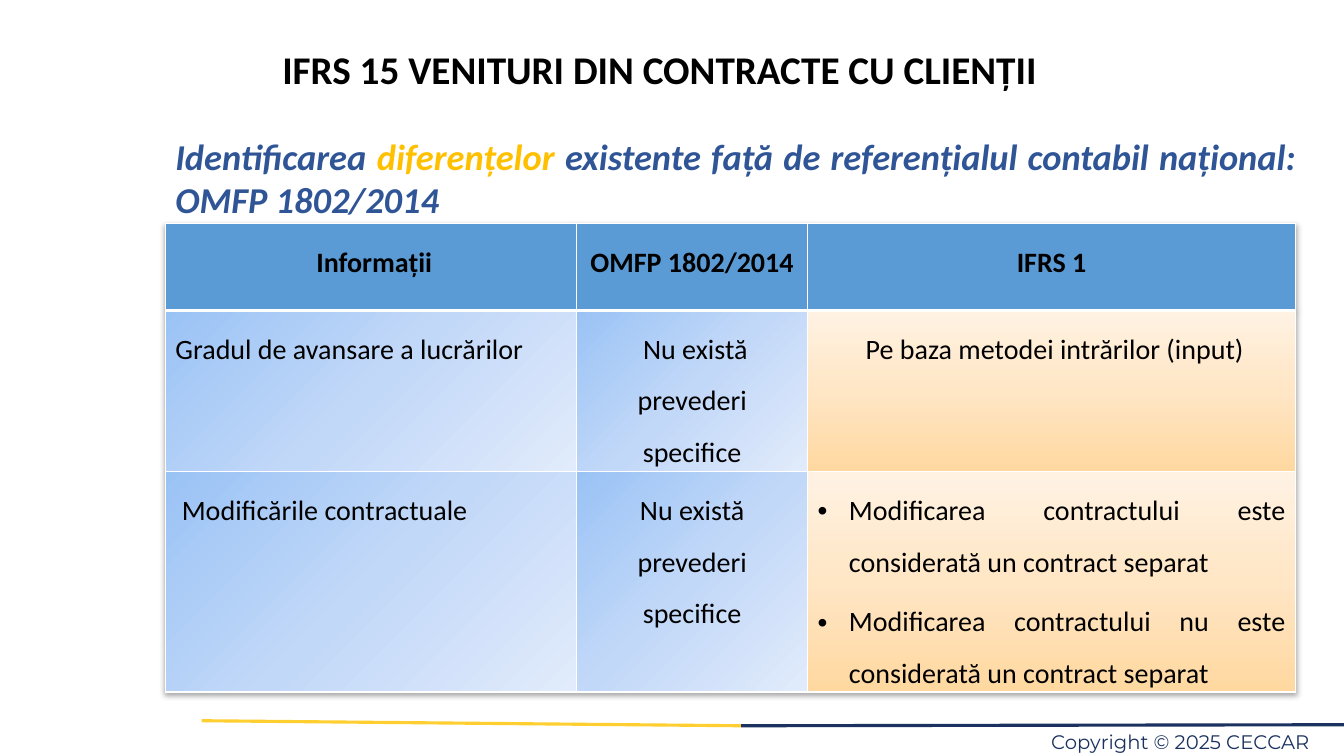
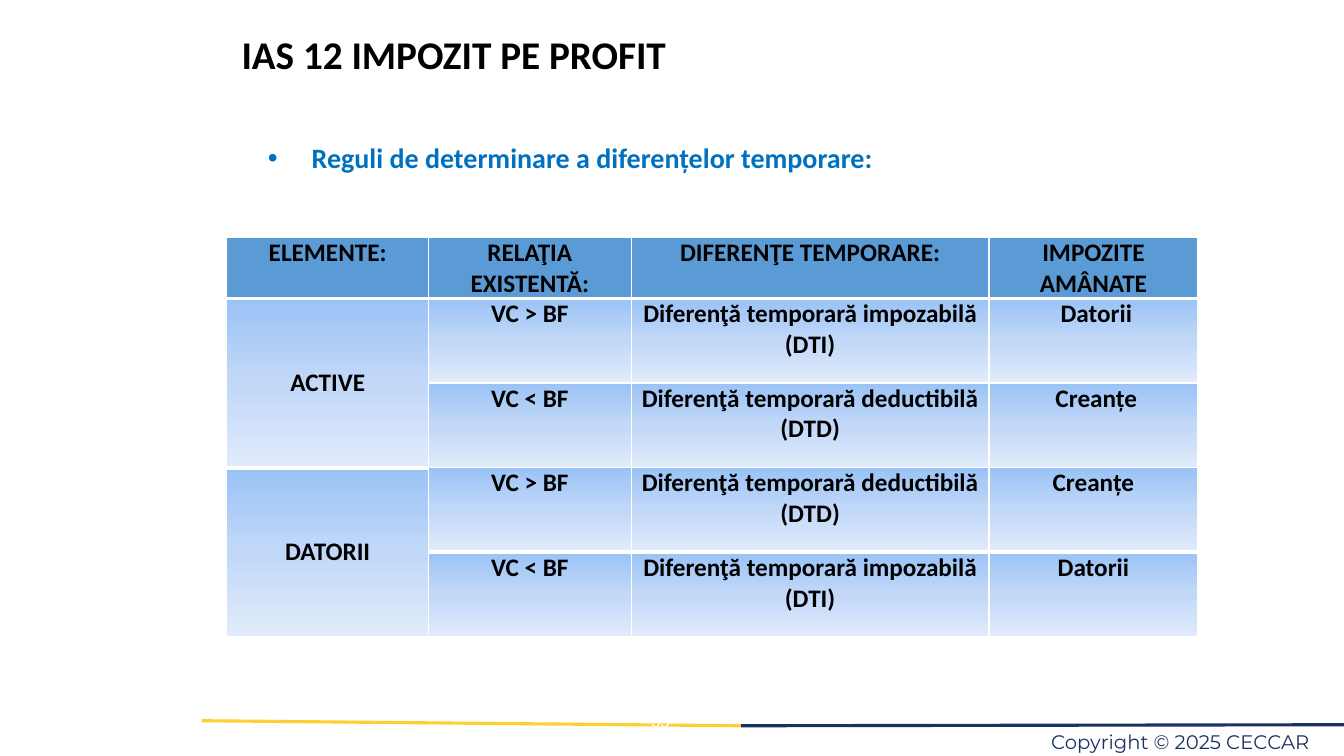
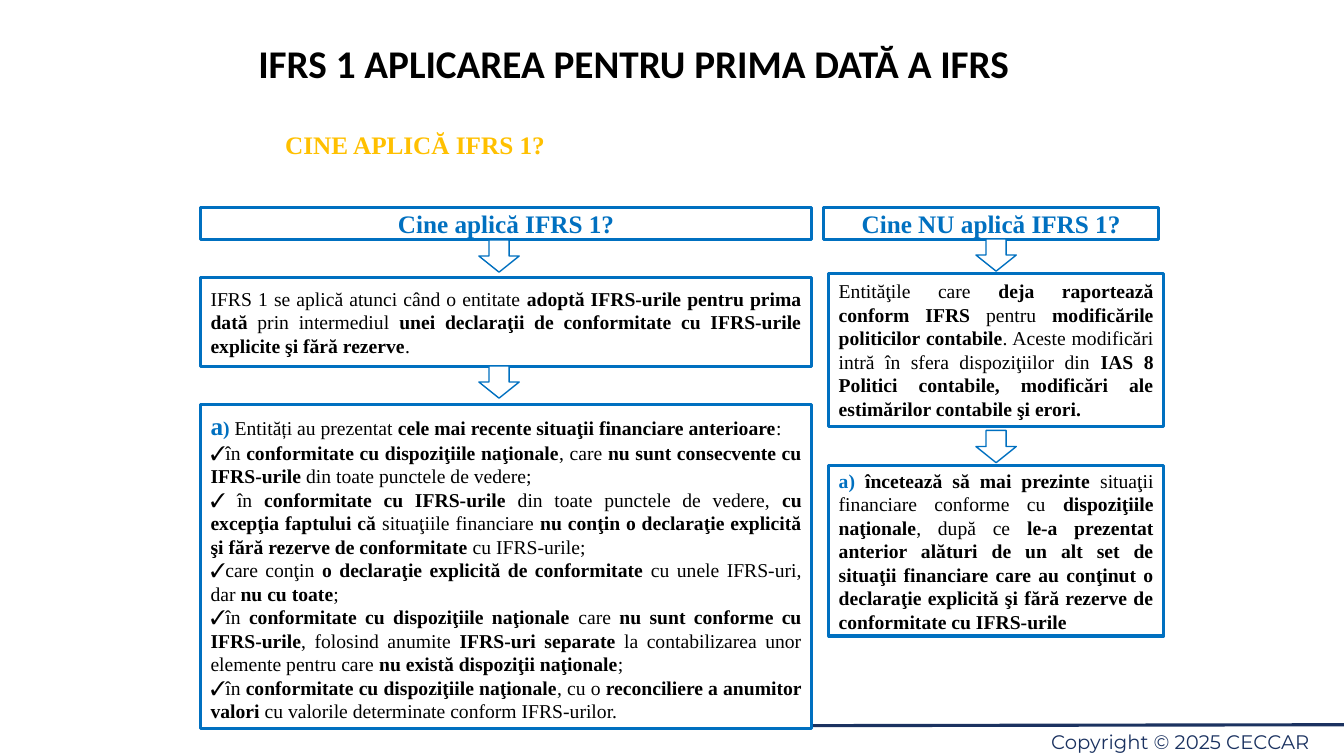
from dataclasses import dataclass, replace

from lxml.etree import SubElement
from pptx import Presentation
from pptx.dml.color import RGBColor
from pptx.enum.shapes import MSO_CONNECTOR, MSO_SHAPE
from pptx.enum.text import MSO_ANCHOR, PP_ALIGN
from pptx.oxml.ns import qn
from pptx.util import Pt

EMU_PER_PX = 9144


@dataclass(frozen=True)
class Type:
    """Describes one kind of lettering."""

    font: str
    size: int
    color: str
    bold: bool = False
    italic: bool = False


@dataclass(frozen=True)
class Theme:
    """Holds the colours and type styles of the presentation."""

    white: str = "FFFFFF"
    yellow: str = "FFCE31"
    navy: str = "1B3260"
    gold: str = "FFC000"
    blue: str = "0070C0"
    header: str = "5B9BD5"
    blue_fade: tuple = ("9AC3F5", "C2D8F8", "E1EBFB")
    orange_fade: tuple = ("FFD8A0", "FFE6C5", "FFF2E3")
    title: Type = Type("Calibri", 28, "000000", True)
    subtitle: Type = Type("Calibri", 26, "2F5597", True, True)
    rule: Type = Type("Calibri", 20, "0070C0", True)
    cell: Type = Type("Calibri", 20, "000000")
    cell_header: Type = Type("Calibri", 20, "000000", True)
    matrix: Type = Type("Calibri", 18, "000000", True)
    question: Type = Type("Times New Roman", 18, "FFC000", True)
    heading: Type = Type("Times New Roman", 18, "0070C0", True)
    step: Type = Type("Times New Roman", 14, "000000")
    copyright: Type = Type("Montserrat", 14, "1B3260")
    number: Type = Type("Arial", 12, "FFFFFF")


@dataclass(frozen=True)
class Step:
    """Describes a box of a flow and the arrow leading to it."""

    top: int
    height: int
    arrow_top: int
    paragraphs: tuple
    lead: tuple = ()


THEME = Theme()


def px(length):
    """Turn px into EMU."""
    return length * EMU_PER_PX


def place(box):
    """Turn a box in px into EMU lengths."""
    return [px(length) for length in box]


def apply_type(font, style):
    """Give a font the look of a type style."""
    font.name, font.size = style.font, Pt(style.size)
    font.bold, font.italic = style.bold, style.italic
    font.color.rgb = RGBColor.from_string(style.color)


def set_indent(paragraph, left, first=0, bullet=None):
    """Indent a paragraph and give it an optional bullet."""
    properties = paragraph._p.get_or_add_pPr()
    properties.set("marL", str(px(left)))
    properties.set("indent", str(px(first)))
    if bullet:
        SubElement(properties, qn("a:buFont"), typeface="Arial")
        SubElement(properties, qn("a:buChar"), char=bullet)


def write(paragraph, text, style, align=PP_ALIGN.LEFT, spacing=None, emphasis=None, lead=()):
    """Write a paragraph whose parts between asterisks are emphasised."""
    paragraph.alignment = align
    if spacing:
        paragraph.line_spacing = spacing
    apply_type(paragraph.font, style)
    for lead_text, lead_style in lead:
        run = paragraph.add_run()
        run.text = lead_text
        apply_type(run.font, lead_style)
    for index, part in enumerate(text.split("*")):
        if part:
            run = paragraph.add_run()
            run.text = part
            if index % 2:
                apply_type(run.font, emphasis)


def add_text(slide, box, text, style, anchor=MSO_ANCHOR.TOP, **options):
    """Add a wrapping text box with one paragraph and return its frame."""
    frame = slide.shapes.add_textbox(*place(box)).text_frame
    frame.word_wrap = True
    frame.vertical_anchor = anchor
    write(frame.paragraphs[0], text, style, **options)
    return frame


def add_title(slide, box, text):
    """Add the slide title."""
    add_text(slide, box, text, THEME.title, align=PP_ALIGN.CENTER, spacing=0.9)


def add_footer(slide):
    """Draw the two-coloured rule and the copyright line."""
    for start, end, color in (
        ((200, 715), (735, 720), THEME.yellow),
        ((735, 720), (1333, 719), THEME.navy),
    ):
        line = slide.shapes.add_connector(MSO_CONNECTOR.STRAIGHT, *place(start + end))
        line.line.color.rgb = RGBColor.from_string(color)
        line.line.width = Pt(2.25)
        SubElement(line._element.spPr, qn("a:effectLst"))
    frame = add_text(slide, (911, 719, 393, 27), "Copyright © 2025 CECCAR ",
                     THEME.copyright, align=PP_ALIGN.RIGHT, spacing=Pt(20.5))
    frame.margin_left = frame.margin_right = frame.margin_top = frame.margin_bottom = 0


def new_slide(presentation):
    """Add a blank slide with the shared footer."""
    slide = presentation.slides.add_slide(presentation.slide_layouts[6])
    add_footer(slide)
    return slide


def add_grid(slide, left, top, columns, rows):
    """Add a plain table with the given column widths and row heights."""
    box = (left, top, sum(columns), sum(rows))
    table = slide.shapes.add_table(len(rows), len(columns), *place(box)).table
    table.first_row = table.horz_banding = False
    for column, width in zip(table.columns, columns):
        column.width = px(width)
    for row, height in zip(table.rows, rows):
        row.height = px(height)
    return table


def add_shadow(table):
    """Put a soft shadow below a table."""
    properties = table._tbl.tblPr
    effects = SubElement(properties, qn("a:effectLst"))
    properties.insert(0, effects)
    shadow = SubElement(effects, qn("a:outerShdw"), blurRad="40000", dist="23000",
                        dir="5400000", rotWithShape="0")
    color = SubElement(shadow, qn("a:srgbClr"), val="000000")
    SubElement(color, qn("a:alpha"), val="35000")


def set_borders(cell, top=1, bottom=1):
    """Give a cell white borders with the given widths in points."""
    properties = cell._tc.get_or_add_tcPr()
    for side, width in (("L", 1), ("R", 1), ("T", top), ("B", bottom)):
        line = SubElement(properties, qn(f"a:ln{side}"), w=str(Pt(width)))
        fill = SubElement(line, qn("a:solidFill"))
        SubElement(fill, qn("a:srgbClr"), val=THEME.white)


def fill_header(cell):
    """Colour a header cell."""
    set_borders(cell, bottom=3)
    cell.fill.solid()
    cell.fill.fore_color.rgb = RGBColor.from_string(THEME.header)


def fill_fade(cell, colors, angle, top=1):
    """Colour a body cell with an even gradient."""
    set_borders(cell, top=top)
    gradient = SubElement(cell._tc.get_or_add_tcPr(), qn("a:gradFill"), rotWithShape="1")
    stops = SubElement(gradient, qn("a:gsLst"))
    for index, color in enumerate(colors):
        stop = SubElement(stops, qn("a:gs"), pos=str(index * 50000))
        SubElement(stop, qn("a:srgbClr"), val=color)
    SubElement(gradient, qn("a:lin"), ang=str(angle * 60000), scaled="0")


def add_comparison_table(slide, left, top):
    """Add the table comparing the national rules with IFRS."""
    rows = (
        (" Informații", "OMFP 1802/2014", "IFRS 1"),
        ("Gradul de avansare a lucrărilor", " Nu există prevederi specifice",
         " Pe baza metodei intrărilor (input)"),
        (" Modificările contractuale", "Nu există prevederi specifice",
         ("Modificarea contractului este considerată un contract separat",
          "Modificarea contractului nu este considerată un contract separat")),
    )
    table = add_grid(slide, left, top, (408, 229, 484), (86, 137, 190))
    add_shadow(table)
    for row, texts in enumerate(rows):
        for column, text in enumerate(texts):
            cell = table.cell(row, column)
            if row == 0:
                fill_header(cell)
            elif column == 2:
                fill_fade(cell, THEME.orange_fade, 270)
            else:
                fill_fade(cell, THEME.blue_fade, 45)
            style = THEME.cell if row else THEME.cell_header
            align = PP_ALIGN.LEFT if row and column == 0 else PP_ALIGN.CENTER
            frame = cell.text_frame
            if isinstance(text, str):
                write(frame.paragraphs[0], text, style, align, 1.5)
                continue
            for index, item in enumerate(text):
                paragraph = frame.add_paragraph() if index else frame.paragraphs[0]
                set_indent(paragraph, 31, -31, "•")
                write(paragraph, item, style, PP_ALIGN.JUSTIFY, 1.5)
                if index:
                    paragraph.space_before = Pt(6)


def add_matrix_table(slide, left, top):
    """Add the table of temporary differences."""
    taxable = "Diferenţă temporară impozabilă (DTI)"
    deductible = "Diferenţă temporară deductibilă (DTD)"
    rows = (
        ("ELEMENTE:", "RELAŢIA EXISTENTĂ:", "DIFERENŢE TEMPORARE:", "IMPOZITE AMÂNATE"),
        ("ACTIVE", "VC > BF", taxable, " Datorii"),
        ("", "VC < BF", deductible, " Creanțe"),
        ("DATORII", "VC > BF", deductible, "Creanțe"),
        ("", "VC < BF", taxable, "Datorii"),
    )
    table = add_grid(slide, left, top, (200, 201, 355, 207), (60, 84, 84, 84, 84))
    for row, texts in enumerate(rows):
        for column, text in enumerate(texts):
            cell = table.cell(row, column)
            cell.margin_left = cell.margin_right = px(7)
            cell.margin_top = cell.margin_bottom = 0
            if row == 0:
                fill_header(cell)
            else:
                thick = (row, column) == (3, 0) or (row == 4 and column > 0)
                fill_fade(cell, THEME.blue_fade, 90, top=3 if thick else 1)
            if text:
                write(cell.text_frame.paragraphs[0], text, THEME.matrix, PP_ALIGN.CENTER)
    for row in (1, 3):
        table.cell(row, 0).merge(table.cell(row + 1, 0))
        table.cell(row, 0).vertical_anchor = MSO_ANCHOR.MIDDLE


def add_outlined(slide, kind, box, width):
    """Add a white shape with a blue outline."""
    shape = slide.shapes.add_shape(kind, *place(box))
    shape.shadow.inherit = False
    shape.fill.solid()
    shape.fill.fore_color.rgb = RGBColor.from_string(THEME.white)
    shape.line.color.rgb = RGBColor.from_string(THEME.blue)
    shape.line.width = Pt(width)
    return shape


def add_box(slide, box, paragraphs, style, align, lead=()):
    """Add an outlined box of text, with a lead before its first paragraph."""
    frame = add_outlined(slide, MSO_SHAPE.RECTANGLE, box, 2.25).text_frame
    frame.word_wrap = True
    frame.vertical_anchor = MSO_ANCHOR.MIDDLE
    for index, text in enumerate(paragraphs):
        paragraph = frame.add_paragraph() if index else frame.paragraphs[0]
        write(paragraph, text, style, align, emphasis=replace(style, bold=True),
              lead=() if index else lead)


def add_flow(slide, left, top, width, heading, steps, arrow_left, step_left=0):
    """Add a heading followed by boxes that arrows lead to."""
    add_box(slide, (left, top, width, 32), (heading,), THEME.heading, PP_ALIGN.CENTER)
    for step in steps:
        add_box(slide, (left + step_left, top + step.top, width, step.height),
                step.paragraphs, THEME.step, PP_ALIGN.JUSTIFY, step.lead)
    for step in steps:
        add_outlined(slide, MSO_SHAPE.DOWN_ARROW,
                     (left + arrow_left, top + step.arrow_top, 40, 32), 1)


def build_revenue_slide(presentation):
    """Build the slide on revenue from contracts."""
    slide = new_slide(presentation)
    add_text(slide, (164, 128, 1132, 94),
             "Identificarea *diferențelor *existente față de referențialul contabil "
             "național: OMFP 1802/2014", THEME.subtitle, align=PP_ALIGN.JUSTIFY,
             emphasis=replace(THEME.subtitle, color=THEME.gold))
    add_comparison_table(slide, 164, 222)
    add_title(slide, (235, 45, 838, 89), "IFRS 15 VENITURI DIN CONTRACTE CU CLIENȚII")


def build_tax_slide(presentation):
    """Build the slide on income tax."""
    slide = new_slide(presentation)
    add_text(slide, (566, 695, 178, 40), "35", THEME.number, MSO_ANCHOR.MIDDLE,
             align=PP_ALIGN.CENTER)
    frame = slide.shapes.add_textbox(*place((246, 118, 900, 100))).text_frame
    frame.word_wrap = True
    set_indent(frame.paragraphs[0], 47, -37, "•")
    write(frame.paragraphs[0], " Reguli de determinare a diferențelor temporare:",
          THEME.rule, PP_ALIGN.JUSTIFY, 1.5)
    add_title(slide, (0, 30, 900, 70), "IAS 12 IMPOZIT PE PROFIT")
    add_matrix_table(slide, 225, 236)


def build_adoption_slide(presentation):
    """Build the slide on first-time adoption."""
    slide = new_slide(presentation)
    frame = add_text(slide, (199, 102, 900, 90), "CINE APLICĂ IFRS 1?", THEME.question,
                     spacing=1.7)
    set_indent(frame.paragraphs[0], 74)
    add_title(slide, (60, 39, 1137, 89), "IFRS 1 APLICAREA PENTRU PRIMA DATĂ A IFRS")
    small_lead = replace(THEME.heading, size=THEME.step.size)
    adopters = (
        Step(69, 89, 32, (
            "IFRS 1 se aplică atunci când o entitate *adoptă IFRS-urile pentru prima dată* "
            "prin intermediul *unei declaraţii de conformitate cu IFRS-urile explicite şi "
            "fără rezerve*.",)),
        Step(195, 322, 157, (
            "Entități au prezentat *cele mai recente situaţii financiare anterioare*:",
            "✓în *conformitate cu dispoziţiile naţionale*, care *nu sunt consecvente cu "
            "IFRS-urile* din toate punctele de vedere;",
            "✓ în *conformitate cu IFRS-urile* din toate punctele de vedere, *cu excepţia "
            "faptului că *situaţiile financiare *nu conţin o declaraţie explicită şi fără "
            "rezerve de conformitate* cu IFRS-urile;",
            "✓care conţin *o declaraţie explicită de conformitate *cu unele IFRS-uri, dar "
            "*nu cu toate*;",
            "✓în *conformitate cu dispoziţiile naţionale* care *nu sunt conforme cu "
            "IFRS-urile*, folosind anumite *IFRS-uri separate* la contabilizarea unor "
            "elemente pentru care *nu există dispoziţii naţionale*;",
            "✓în *conformitate cu dispoziţiile naţionale*, cu o *reconciliere a anumitor "
            "valori* cu valorile determinate conform IFRS-urilor.",
        ), (("a", THEME.heading), (") ", small_lead))),
    )
    others = (
        Step(65, 152, 31, (
            "Entităţile care *deja raportează conform IFRS* pentru *modificările politicilor "
            "contabile*. Aceste modificări intră în sfera dispoziţiilor din *IAS 8 Politici "
            "contabile, modificări ale estimărilor contabile şi erori.*",)),
        Step(256, 169, 221, (
            "*încetează să mai prezinte *situaţii financiare conforme cu *dispoziţiile "
            "naţionale*, după ce *le-a prezentat anterior alături de un alt set de situaţii "
            "financiare care au conţinut o declaraţie explicită şi fără rezerve de "
            "conformitate cu IFRS-urile*",), (("a) ", small_lead),)),
    )
    add_flow(slide, 199, 206, 606, "Cine aplică IFRS 1?", adopters, 276)
    add_flow(slide, 817, 206, 332, "Cine NU aplică IFRS 1?", others, 151, step_left=5)


def main():
    """Build and save the presentation."""
    presentation = Presentation()
    presentation.slide_width, presentation.slide_height = px(1333), px(750)
    build_revenue_slide(presentation)
    build_tax_slide(presentation)
    build_adoption_slide(presentation)
    presentation.save("out.pptx")


if __name__ == "__main__":
    main()
